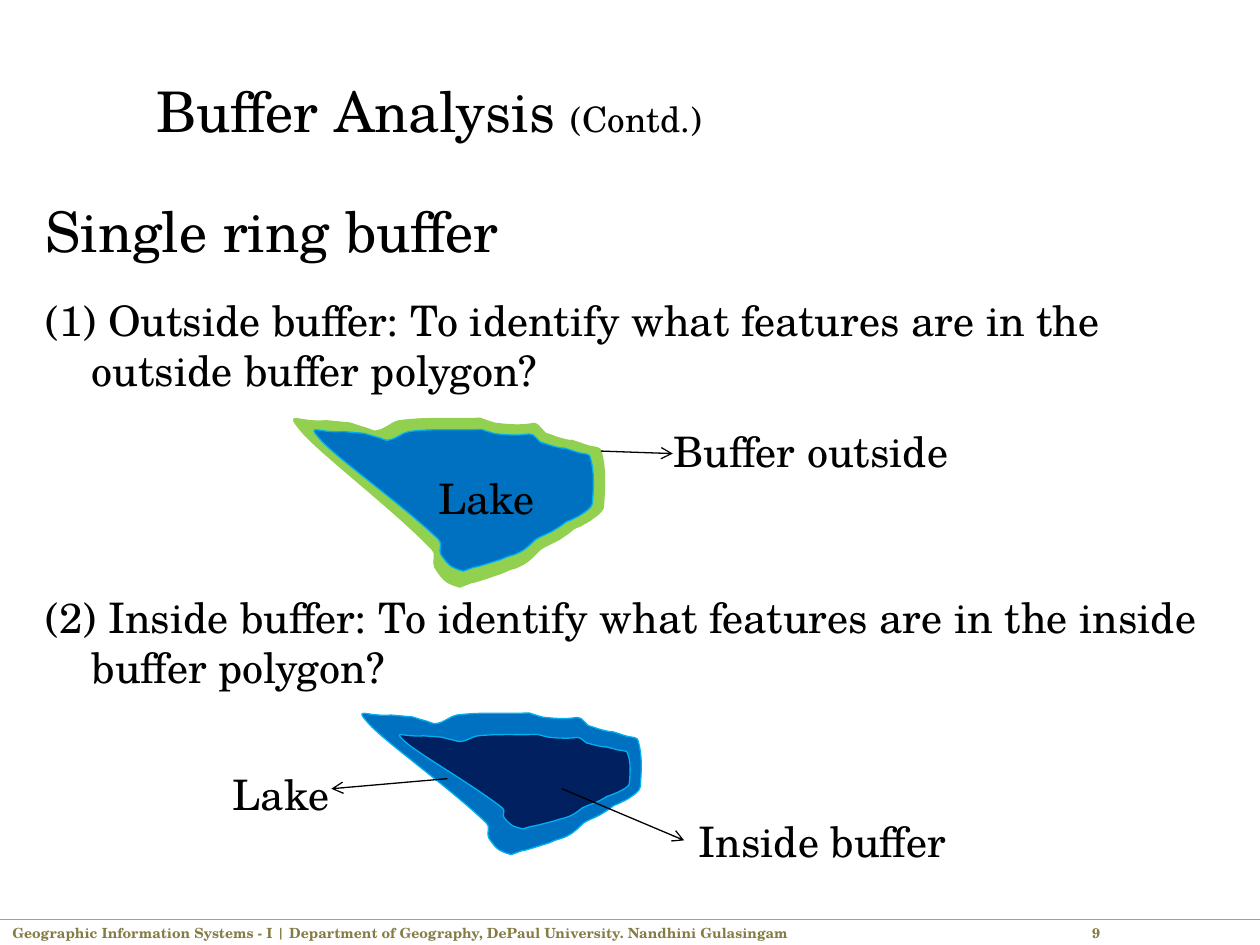
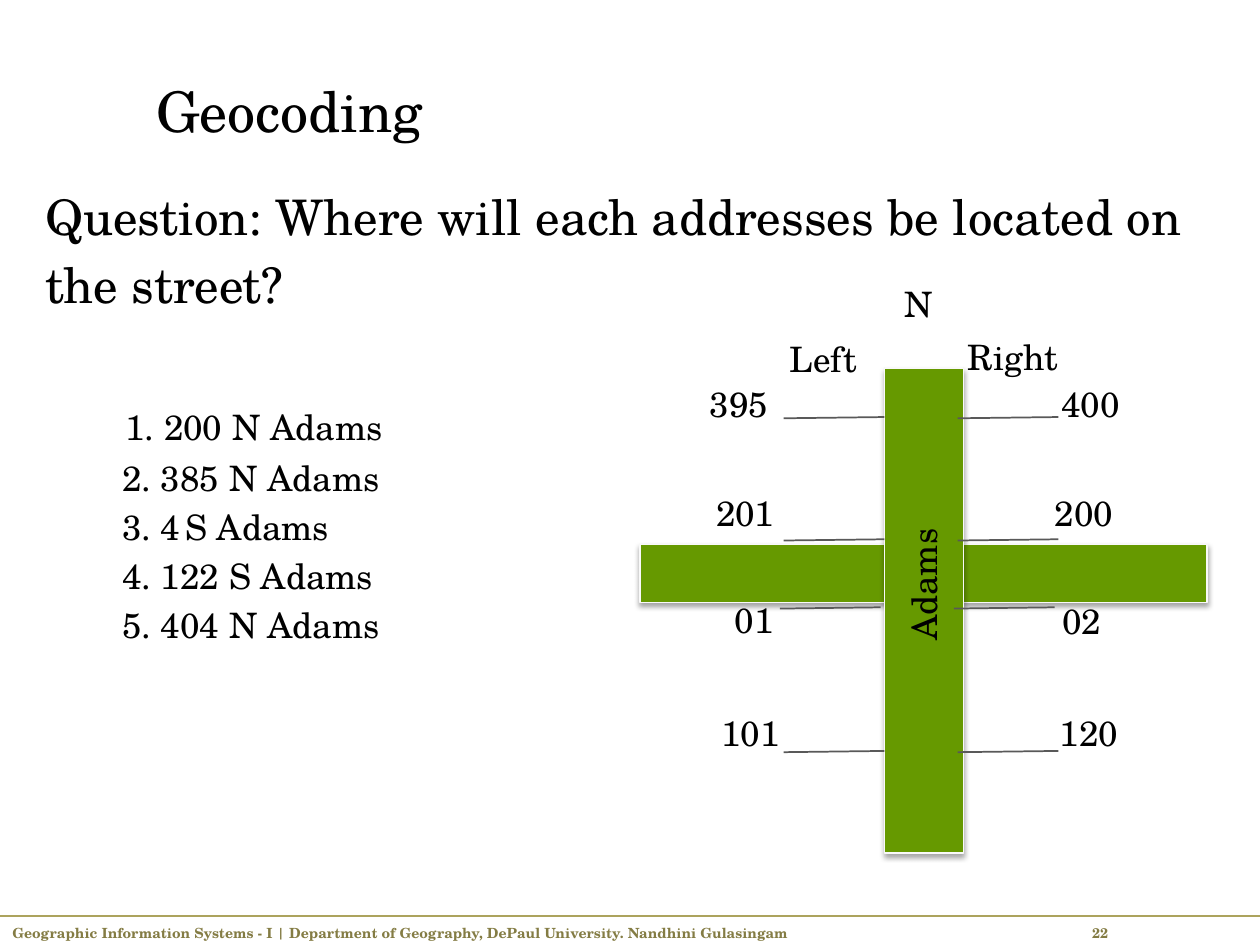
import lxml.etree
import pptx
import pptx.dml.color
import pptx.enum.shapes
import pptx.enum.text
import pptx.oxml
import pptx.oxml.ns
import pptx.util

Inches = pptx.util.Inches
Pt = pptx.util.Pt
ALIGN = pptx.enum.text.PP_ALIGN
ANCHOR = pptx.enum.text.MSO_ANCHOR
qn = pptx.oxml.ns.qn

FONT = "TeX Gyre Schola"
COLORS = {
    "text": "000000",
    "footer": "847C44",
    "rule": "ACA35D",
    "buffer": "92D050",
    "lake": "0070C0",
    "shore": "00B0F0",
    "inside": "002060",
    "street": "669900",
    "curb": "F9F9F9",
    "tick": "595959",
}
FOOTER = (
    "Geographic Information Systems - I | Department of Geography, "
    "DePaul University. Nandhini Gulasingam"
)

LAKE_GRID = (256, 143)
LAKE_START = (14, 17)
LAKE_CURVES = [
    ((28, 34), (86, 78), (118, 111)),
    ((122, 114), (118, 121), (120, 125)),
    ((128, 138), (131, 138), (140, 141)),
    ((163, 132), (135, 143), (170, 131)),
    ((174, 130), (177, 128), (180, 127)),
    ((182, 126), (185, 126), (186, 125)),
    ((191, 123), (195, 120), (198, 117)),
    ((200, 115), (202, 113), (204, 111)),
    ((210, 107), (217, 105), (222, 101)),
    ((225, 99), (228, 97), (230, 95)),
    ((233, 93), (236, 93), (238, 91)),
    ((243, 89), (250, 83), (250, 83)),
    ((252, 81), (254, 79), (254, 77)),
    ((255, 62), (256, 47), (252, 33)),
    ((252, 30), (246, 30), (242, 29)),
    ((216, 20), (239, 28), (220, 23)),
    ((216, 22), (212, 20), (208, 19)),
    ((194, 4), (208, 16), (168, 11)),
    ((164, 10), (156, 7), (156, 7)),
    ((135, 8), (114, 6), (92, 9)),
    ((86, 10), (81, 16), (74, 17)),
    ((72, 18), (69, 16), (66, 15)),
    ((45, 9), (63, 12), (34, 9)),
    ((12, 11), (0, 0), (14, 17)),
]


def rgb(name):
    """Return the named colour."""
    return pptx.dml.color.RGBColor.from_string(COLORS[name])


def write(para, text, size=20, color="text", bold=False):
    """Append a formatted span to a paragraph."""
    span = para.add_run()
    span.text = text
    span.font.name = FONT
    span.font.size = Pt(size)
    span.font.bold = bold
    span.font.color.rgb = rgb(color)


def add_tab(para, place):
    """Give a paragraph one left tab stop."""
    tabs = lxml.etree.SubElement(para._p.get_or_add_pPr(), qn("a:tabLst"))
    lxml.etree.SubElement(tabs, qn("a:tab"), pos=str(Inches(place)), algn="l")


def add_box(page, left, top, width, height, wrap=True, anchor=ANCHOR.TOP):
    """Add an empty text box."""
    box = page.shapes.add_textbox(Inches(left), Inches(top), Inches(width), Inches(height))
    box.text_frame.word_wrap = wrap
    box.text_frame.vertical_anchor = anchor
    return box


def add_label(page, text, left, top, width, size=20):
    """Add a centred one-line label."""
    box = add_box(page, left, top, width, 0.5 if size == 24 else 0.44, wrap=False)
    para = box.text_frame.paragraphs[0]
    para.alignment = ALIGN.CENTER
    write(para, text, size=size)
    return box


def add_body(page, top, height, lines):
    """Add body paragraphs from (text, size, space before, margin, indent) rows."""
    frame = add_box(page, 0.25, top, 9.58, height).text_frame
    for number, (text, size, before, margin, indent) in enumerate(lines):
        para = frame.add_paragraph() if number else frame.paragraphs[0]
        props = para._p.get_or_add_pPr()
        props.set("marL", str(Inches(margin)))
        props.set("indent", str(Inches(indent)))
        para.space_before = Pt(before)
        if "\t" in text:
            add_tab(para, 1.23)
        write(para, text, size=size)


def add_line(page, start, end, color, width, arrow=False):
    """Add a straight line, with an open arrowhead at its end if asked."""
    line = page.shapes.add_connector(
        pptx.enum.shapes.MSO_CONNECTOR.STRAIGHT, *map(Inches, (*start, *end))
    )
    line.line.color.rgb = rgb(color)
    line.line.width = Pt(width)
    if arrow:
        lxml.etree.SubElement(line.line._get_or_add_ln(), qn("a:tailEnd"), type="arrow")
    lxml.etree.SubElement(line._element.spPr, qn("a:effectLst"))
    return line


def add_arrow(page, start, end):
    """Add a thin black arrow."""
    return add_line(page, start, end, "text", 0.75, arrow=True)


def paint(shape, fill, line):
    """Fill and outline a shape without the theme's shadow."""
    shape.shadow.inherit = False
    shape.fill.solid()
    shape.fill.fore_color.rgb = rgb(fill)
    shape.line.color.rgb = rgb(line)
    shape.line.width = Pt(0.75)


def add_segment(outline, kind, points):
    """Append a move or a curve to a freeform outline."""
    segment = lxml.etree.SubElement(outline, qn(kind))
    for x, y in points:
        lxml.etree.SubElement(segment, qn("a:pt"), x=str(x), y=str(y))


def add_lake(page, left, top, width, height, fill, line):
    """Draw the curved lake outline stretched over the given area."""
    builder = page.shapes.build_freeform(*LAKE_START)
    builder.add_line_segments([curve[-1] for curve in LAKE_CURVES], close=True)
    lake = builder.convert_to_shape()
    lake.left, lake.top = Inches(left), Inches(top)
    lake.width, lake.height = Inches(width), Inches(height)

    outline = next(lake._element.iter(qn("a:path")))
    for segment in list(outline):
        outline.remove(segment)
    outline.set("w", str(LAKE_GRID[0]))
    outline.set("h", str(LAKE_GRID[1]))
    add_segment(outline, "a:moveTo", [LAKE_START])
    for curve in LAKE_CURVES:
        add_segment(outline, "a:cubicBezTo", curve)
    lxml.etree.SubElement(outline, qn("a:close"))
    paint(lake, fill, line)
    return lake


def add_street(page, left, top, width, height):
    """Add a street bar with a soft shadow below it."""
    street = page.shapes.add_shape(
        pptx.enum.shapes.MSO_SHAPE.RECTANGLE, *map(Inches, (left, top, width, height))
    )
    paint(street, "street", "curb")
    effects = street._element.spPr.find(qn("a:effectLst"))
    shadow = lxml.etree.SubElement(
        effects, qn("a:outerShdw"), blurRad=str(Pt(3.1)), dist=str(Pt(1.8)), dir="5400000"
    )
    tone = lxml.etree.SubElement(shadow, qn("a:srgbClr"), val=COLORS["text"])
    lxml.etree.SubElement(tone, qn("a:alpha"), val="35000")


def add_page(deck, title, number, rule_top, suffix=""):
    """Add a page with its title, footer and footer rule."""
    page = deck.slides.add_slide(deck.slide_layouts[6])
    box = add_box(page, 1.14, 0.25, 8.43, 0.94, anchor=ANCHOR.BOTTOM)
    para = box.text_frame.paragraphs[0]
    write(para, title, size=32)
    if suffix:
        write(para, suffix, size=20)
    para = add_box(page, 0, 7.29, 10, 0.25).text_frame.paragraphs[0]
    add_tab(para, 8.57)
    write(para, f"{FOOTER}\t{number}", size=8, color="footer", bold=True)
    add_line(page, (0, rule_top), (10, rule_top), "rule", 0.75)
    return page


def build_buffer_page(deck):
    """Build the page on outside and inside buffers."""
    page = add_page(deck, "Buffer Analysis ", 9, 7.3, suffix="(Contd.)")
    outside = "(1) Outside buffer: To identify what features are in the outside buffer polygon?"
    inside = "(2) Inside buffer: To identify what features are in the inside buffer polygon?"
    add_body(page, 1.51, 5.46, [
        ("Single ring buffer", 32, 0, 0.38, -0.37),
        (outside, 24, 17.5, 0.38, -0.37),
        (inside, 24, 112, 0.38, -0.37),
    ])

    add_lake(page, 2.25, 3.25, 2.56, 1.43, "buffer", "buffer")
    lake = add_lake(page, 2.42, 3.35, 2.3, 1.2, "lake", "shore")
    frame = lake.text_frame
    frame.word_wrap = False
    frame.vertical_anchor = ANCHOR.MIDDLE
    frame.margin_left, frame.margin_right = Inches(0.68), Inches(0.1)
    para = frame.paragraphs[0]
    para.alignment = ALIGN.CENTER
    write(para, "Lake", size=24)
    add_arrow(page, (4.77, 3.58), (5.34, 3.6))
    add_label(page, "Buffer outside", 5.23, 3.33, 2.41, size=24)

    add_lake(page, 2.8, 5.6, 2.3, 1.2, "lake", "shore")
    add_lake(page, 3.11, 5.79, 1.9, 0.8, "inside", "shore")
    arrow = add_arrow(page, (4.46, 6.26), (5.44, 6.67))
    arrow.end_connect(add_label(page, "Inside buffer", 5.43, 6.42, 2.19, size=24), 1)
    add_arrow(page, (3.55, 6.18), (2.63, 6.26))
    add_label(page, "Lake", 1.74, 6.05, 0.98, size=24)


def build_geocoding_page(deck):
    """Build the page that asks where addresses fall on a street."""
    page = add_page(deck, "Geocoding", 22, 7.27)
    add_body(page, 1.43, 5.57, [
        ("Question: Where will each addresses be located on", 28, 0, 0.38, -0.37),
        ("the street?", 28, 5.6, 0.38, -0.37),
        ("1. 200 N Adams", 20, 52.5, 0.65, 0),
        ("2. 385 N Adams", 20, 5, 0.62, 0),
        ("3. 4\tS Adams", 20, 4, 0.62, 0),
        ("4. 122 S Adams", 20, 4, 0.62, 0),
        ("5. 404 N Adams", 20, 4, 0.62, 0),
    ])

    add_street(page, 5.08, 4.32, 4.5, 0.46)
    add_street(page, 7.02, 2.92, 0.63, 3.85)
    add_label(page, "Adams", 6.78, 4.42, 1.1).rotation = 270
    add_label(page, "N", 7.08, 2.19, 0.43)
    add_label(page, "Left", 6.17, 2.63, 0.73)
    add_label(page, "Right", 7.58, 2.61, 0.92)

    for tick_top, shift in ((3.32, 0), (4.29, 0), (4.83, -0.03), (5.97, 0)):
        for tick_left in (6.22, 7.6):
            start = tick_left + shift
            add_line(page, (start, tick_top), (start + 0.8, tick_top - 0.01), "tick", 1)
    house_numbers = [
        ("395", 5.53, 2.99), ("400", 8.32, 2.99),
        ("201", 5.58, 3.85), ("200", 8.27, 3.85),
        ("01", 5.73, 4.7), ("02", 8.33, 4.71),
        ("101", 5.62, 5.6), ("120", 8.31, 5.6),
    ]
    for text, left, top in house_numbers:
        add_label(page, text, left, top, 0.67 if len(text) == 3 else 0.51)


def main():
    """Build and save the deck."""
    deck = pptx.Presentation()
    deck.slide_width, deck.slide_height = Inches(10), Inches(7.5)
    build_buffer_page(deck)
    build_geocoding_page(deck)
    deck.save("out.pptx")


if __name__ == "__main__":
    main()
